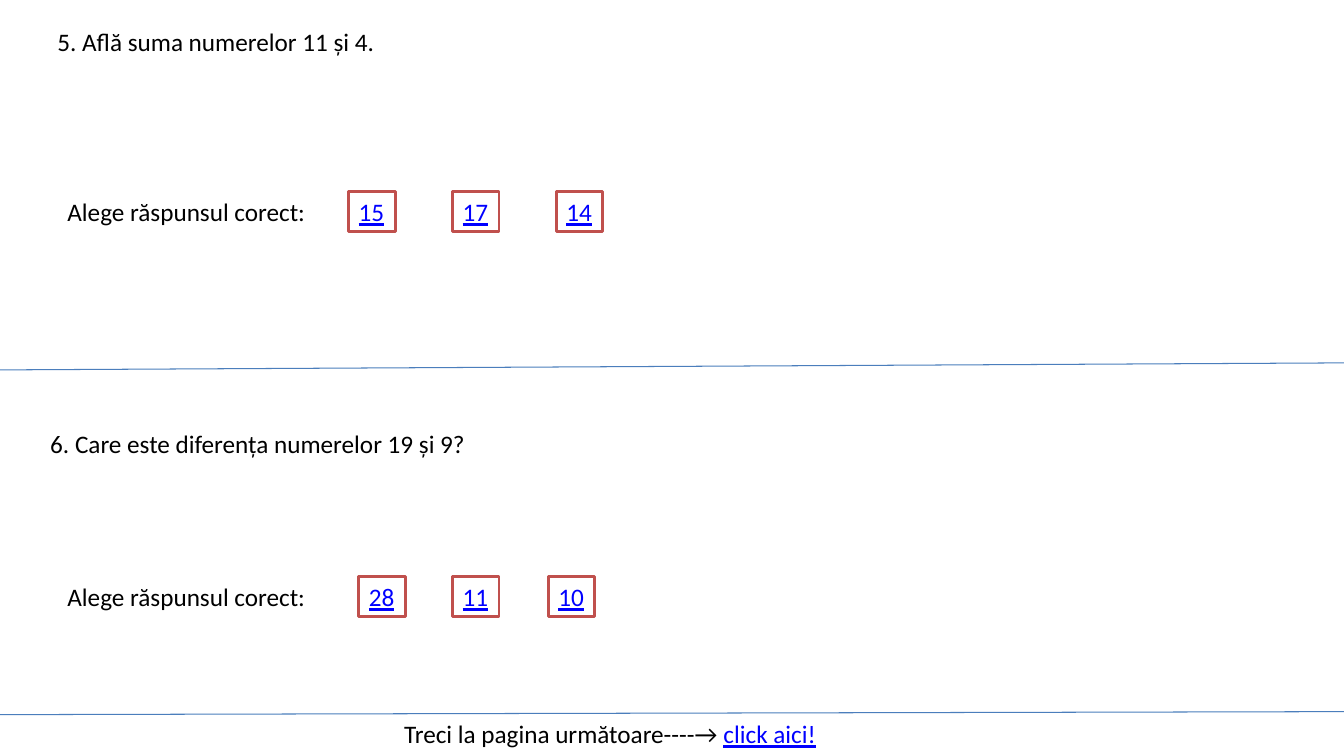
from lxml import etree
from pptx import Presentation
from pptx.dml.color import RGBColor
from pptx.enum.shapes import MSO_CONNECTOR, MSO_SHAPE
from pptx.enum.text import MSO_ANCHOR, MSO_AUTO_SIZE, PP_ALIGN
from pptx.oxml.ns import qn
from pptx.util import Inches, Pt

STRAIGHT = MSO_CONNECTOR.STRAIGHT
RECTANGLE = MSO_SHAPE.RECTANGLE
TOP = MSO_ANCHOR.TOP
FIT_SHAPE = MSO_AUTO_SIZE.SHAPE_TO_FIT_TEXT
LEFT = PP_ALIGN.LEFT

FONT = "Calibri"
BLACK, WHITE, LINK_BLUE = "000000", "FFFFFF", "0000FF"
RULE_BLUE, ANSWER_RED = "4B7EBC", "C0504D"
SLIDE_WIDTH, SLIDE_HEIGHT = 13.33, 7.5
ROW_HEIGHT = 0.4
PROMPT = "Alege răspunsul corect:"


def rgb(hex_code):
    return RGBColor.from_string(hex_code)


def format_run(run, color=BLACK, underline=False):
    run.font.name = FONT
    run.font.size = Pt(18)
    run.font.color.rgb = rgb(color)
    if underline:
        run.font.underline = True


def set_frame(frame, text, wrap=False):
    frame.text = text
    frame.word_wrap = wrap
    frame.auto_size = FIT_SHAPE
    frame.vertical_anchor = TOP
    frame.paragraphs[0].alignment = LEFT
    return frame.paragraphs[0]


def add_text(slide, left, top, width, text, wrap=False):
    label = slide.shapes.add_textbox(
        Inches(left), Inches(top), Inches(width), Inches(ROW_HEIGHT))
    paragraph = set_frame(label.text_frame, text, wrap)
    format_run(paragraph.runs[0])
    return paragraph


def add_answer(slide, left, top, text, width=0.46):
    answer = slide.shapes.add_shape(
        RECTANGLE, Inches(left), Inches(top), Inches(width), Inches(ROW_HEIGHT))
    answer.shadow.inherit = False
    answer.fill.solid()
    answer.fill.fore_color.rgb = rgb(WHITE)
    answer.line.color.rgb = rgb(ANSWER_RED)
    answer.line.width = Pt(2)
    paragraph = set_frame(answer.text_frame, text)
    format_run(paragraph.runs[0], LINK_BLUE, underline=True)


def add_divider(slide, start_y, end_y):
    divider = slide.shapes.add_connector(
        STRAIGHT, Inches(0), Inches(start_y), Inches(SLIDE_WIDTH), Inches(end_y))
    divider.line.color.rgb = rgb(RULE_BLUE)
    divider.line.width = Pt(0.75)
    etree.SubElement(divider._element.spPr, qn("a:effectLst"))


def add_exercise(slide, left, top, width, question, prompt_offset, answers):
    """Place a question, then its prompt and answers in a row below."""
    add_text(slide, left, top, width, question)
    answer_top = top + prompt_offset
    add_text(slide, 0.57, answer_top, 2.59, PROMPT)
    for answer_left, value in answers:
        add_answer(slide, answer_left, answer_top, value)


def add_next_page(slide, left, top, width):
    paragraph = add_text(
        slide, left, top, width, "Treci la pagina următoare----→ ", wrap=True)
    click_here = paragraph.add_run()
    click_here.text = "click aici!"
    format_run(click_here, LINK_BLUE, underline=True)


def main():
    presentation = Presentation()
    presentation.slide_width = Inches(SLIDE_WIDTH)
    presentation.slide_height = Inches(SLIDE_HEIGHT)
    slide = presentation.slides.add_slide(presentation.slide_layouts[6])

    # Dividers below each exercise
    add_divider(slide, 3.67, 3.6)
    add_divider(slide, 7.09, 7.06)

    # Exercises
    add_exercise(slide, 0.47, 0.21, 3.38, "5. Află suma numerelor 11 și 4.",
                 1.69, [(3.46, "15"), (4.49, "17"), (5.52, "14")])
    add_exercise(slide, 0.4, 4.2, 4.37, "6. Care este diferența numerelor 19 și 9?",
                 1.52, [(3.56, "28"), (4.49, "11"), (5.44, "10")])

    # Way to the next page
    add_next_page(slide, 3.91, 7.08, 4.37)

    presentation.save("out.pptx")


if __name__ == "__main__":
    main()
